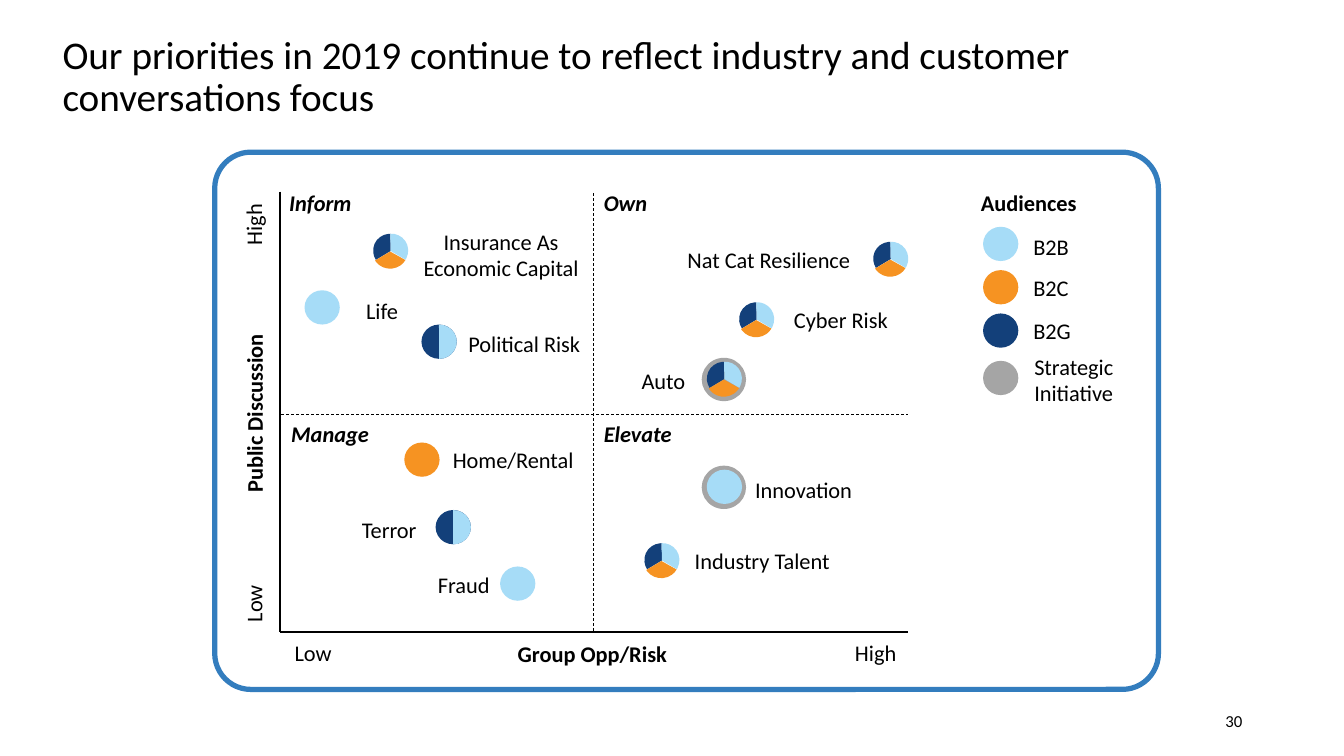
from lxml import etree
from pptx import Presentation
from pptx.dml.color import RGBColor
from pptx.enum.dml import MSO_LINE
from pptx.enum.shapes import MSO_CONNECTOR, MSO_SHAPE
from pptx.enum.text import MSO_ANCHOR, MSO_AUTO_SIZE, PP_ALIGN
from pptx.oxml.ns import qn
from pptx.util import Pt

LEFT, MID, RIGHT = PP_ALIGN.LEFT, PP_ALIGN.CENTER, PP_ALIGN.RIGHT
TOP, CENTRE = MSO_ANCHOR.TOP, MSO_ANCHOR.MIDDLE
OVAL, PIE, CHORD = MSO_SHAPE.OVAL, MSO_SHAPE.PIE, MSO_SHAPE.CHORD
ROUND = MSO_SHAPE.ROUNDED_RECTANGLE
DASH = MSO_LINE.DASH
PX = 9144  # 100 px to the inch
FONT = "Calibri"
HEX = {"B2B": "A6DCF7", "B2C": "F69322", "B2G": "13407A",
       "ring": "A5A5A5", "ink": "000000", "frame": "337DBE"}

# Content
TITLE = ("Our priorities in 2019 continue to reflect industry "
         "and customer conversations focus")
PAGE = "30"

# Topic: label, label box, disc corner, audiences, strategic or not
ALL, HALF = ("B2G", "B2C", "B2B"), ("B2G", "B2B")
TOPICS = [
    ("Insurance As Economic Capital", (401, 221, 192, 60), (370, 232), ALL, False),
    ("Life", (341, 290, 76, 29), (302, 288), ("B2B",), False),
    ("Political Risk", (438, 323, 164, 35), (418, 322), HALF, False),
    ("Nat Cat Resilience", (657, 239, 211, 35), (866, 240), ALL, False),
    ("Cyber Risk", (753, 299, 162, 35), (733, 300), ALL, False),
    ("Auto", (604, 359, 108, 35), (701, 359), ALL, True),
    ("Home/Rental", (433, 438, 152, 60), (401, 439), ("B2C",), False),
    ("Terror", (325, 507, 122, 62), (432, 506), HALF, False),
    ("Fraud", (399, 562, 122, 34), (496, 562), ("B2B",), False),
    ("Innovation", (736, 467, 122, 32), (701, 466), ("B2B",), True),
    ("Industry Talent", (667, 538, 178, 51), (639, 539), ALL, False),
]

# Key: label, label box, disc top, colour
KEY = [
    ("B2B", (1015, 226, 65, 35), 225, "B2B"),
    ("B2C", (1015, 267, 65, 35), 268, "B2C"),
    ("B2G", (1015, 310, 65, 35), 311, "B2G"),
    ("Strategic Initiative", (1016, 345, 140, 61), 358, "ring"),
]

# Headings and axis names: text, box, format
NAMES = [
    ("Inform", (277, 183, 128, 37), {"bold": True, "italic": True}),
    ("Own", (589, 183, 88, 35), {"bold": True, "italic": True}),
    ("Manage", (279, 412, 117, 35), {"bold": True, "italic": True}),
    ("Elevate", (589, 412, 117, 35), {"bold": True, "italic": True}),
    ("Audiences", (963, 183, 167, 33), {"bold": True}),
    ("High", (218, 205, 66, 36), {"align": MID, "turn": 270}),
    ("Public Discussion", (116, 392, 271, 36),
     {"align": MID, "turn": 270, "bold": True}),
    ("Low", (220, 578, 62, 36), {"turn": 270}),
    ("Low", (278, 629, 65, 35), {"align": MID}),
    ("Group Opp/Risk", (428, 630, 319, 33), {"align": MID, "bold": True}),
    ("High", (831, 629, 75, 35), {"align": MID}),
]

# Axes and dividers: ends, width, dash
LINES = [
    ((279, 411, 901, 411), 0.5, DASH),
    ((589, 626, 589, 190), 0.5, DASH),
    ((278, 190, 278, 627), 1.5, None),
    ((278, 627, 901, 627), 1.5, None),
]

# Third of a disc: size, turn, angles
THIRDS = {"B2G": (35, 34, 23.6, (75.227, 147.23)),
          "B2C": (34, 35, 263.9, (75.227, 147.23)),
          "B2B": (35, 34, 145.2, (73.984, 147.23))}


def emu(box):
    return [n * PX for n in box]


def color(name):
    return RGBColor.from_string(HEX[name])


def write(shape, text, size=16, align=LEFT, anchor=TOP, bold=False,
          italic=False, turn=0, space=None):
    shape.rotation = turn
    frame = shape.text_frame
    frame.word_wrap = True
    frame.auto_size = MSO_AUTO_SIZE.NONE
    frame.vertical_anchor = anchor
    para = frame.paragraphs[0]
    para.alignment = align
    para.line_spacing = space
    run = para.add_run()
    run.text = text
    font = run.font
    font.name, font.size = FONT, Pt(size)
    font.bold, font.italic = bold, italic
    font.color.rgb = color("ink")


def label(shapes, text, box, **form):
    write(shapes.add_textbox(*emu(box)), text, **form)


def draw(shapes, kind, box, fill, turn=0, adj=()):
    shape = shapes.add_shape(kind, *emu(box))
    shape.shadow.inherit = False
    shape.fill.solid()
    shape.fill.fore_color.rgb = color(fill)
    shape.line.fill.background()
    shape.rotation = turn
    for i, val in enumerate(adj):
        shape.adjustments[i] = val


def disc(shapes, x, y, who):
    if len(who) == 3:
        for name in who:
            w, h, turn, adj = THIRDS[name]
            draw(shapes, PIE, (x, y, w, h), name, turn, adj)
        return
    box = (x, y, 35, 34)
    draw(shapes, OVAL, box, who[0])
    if len(who) == 2:
        draw(shapes, CHORD, box, who[1], 180, (53.744, 162))


def rule(shapes, ends, width, dash):
    line = shapes.add_connector(MSO_CONNECTOR.STRAIGHT, *emu(ends))
    line.line.color.rgb = color("ink")
    line.line.width = Pt(width)
    if dash:
        line.line.dash_style = dash
    etree.SubElement(line._element.spPr, qn("a:effectLst"))


def main():
    deck = Presentation()
    deck.slide_width, deck.slide_height = emu((1333, 750))
    slide = deck.slides.add_slide(deck.slide_layouts[5])

    # Title
    title = slide.shapes.title
    title.left, title.top, title.width, title.height = emu((52, 25, 1175, 104))
    write(title, TITLE, size=28, anchor=CENTRE, space=0.9)

    # Matrix
    matrix = slide.shapes.add_group_shape().shapes
    for ends, width, dash in LINES:
        rule(matrix, ends, width, dash)
    for text, box, form in NAMES:
        label(matrix, text, box, **form)
    for text, box, (x, y), who, ringed in TOPICS:
        label(matrix, text, box, align=MID)
        if ringed:
            draw(matrix, OVAL, (x - 5, y - 4, 44, 43), "ring")
        disc(matrix, x, y, who)

    # Key
    for text, box, y, name in KEY:
        label(matrix, text, box)
        disc(matrix, 975, y, (name,))

    # Frame and page number
    frame = slide.shapes.add_shape(ROUND, *emu((213, 151, 936, 533)))
    frame.shadow.inherit = False
    frame.fill.background()
    frame.line.color.rgb = color("frame")
    frame.line.width = Pt(3.75)
    frame.adjustments[0] = 0.067
    label(slide.shapes, PAGE, (942, 695, 300, 40), size=12, align=RIGHT,
          anchor=CENTRE)
    deck.save("out.pptx")


if __name__ == "__main__":
    main()
